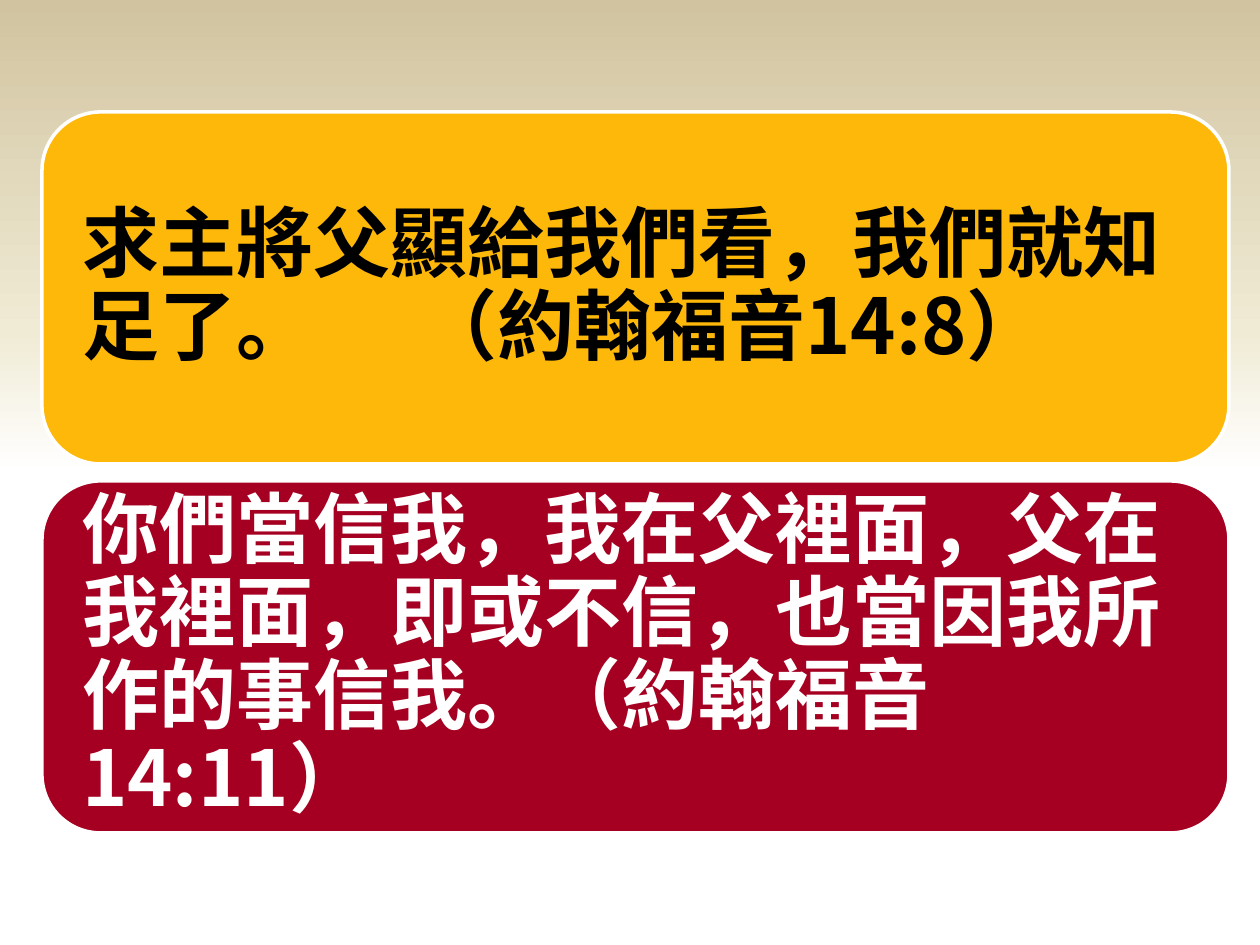
from lxml.etree import SubElement
from pptx import Presentation
from pptx.dml.color import RGBColor
from pptx.enum.shapes import MSO_SHAPE
from pptx.enum.text import MSO_ANCHOR, PP_ALIGN
from pptx.oxml.ns import qn
from pptx.util import Emu, Pt

FONT = "Noto Sans CJK SC"
VERSES = [
    ("求主將父顯給我們看，我們就知足了。\t（約翰福音14:8）", "FEB80A", "000000"),
    ("你們當信我，我在父裡面，父在我裡面，即或不信，也當因我所作的事信我。（約翰福音14:11）",
     "A50021", "FFFFFF"),
]
BACKGROUND_STOPS = [(50, "FFFFFF"), (65, "F0EBD5"), (100, "D1C39F")]


def px(length):
    """Turn pixels into EMU at 126 pixels to the inch."""
    return Emu(round(length * 914400 / 126))


def color(code):
    """Return the colour of a hex string."""
    return RGBColor.from_string(code)


def paint_background(page, stops):
    """Fill the page with a gradient that runs from bottom to top."""
    fill = page.background.fill
    fill.gradient()
    fill.gradient_angle = 90
    stop_list = page.background._cSld.find(".//" + qn("a:gsLst"))
    for old_stop in list(stop_list):
        stop_list.remove(old_stop)
    for position, code in stops:
        stop = SubElement(stop_list, qn("a:gs"), pos=str(position * 1000))
        SubElement(stop, qn("a:srgbClr"), val=code)


def add_tab_stop(para, position):
    """Give a paragraph one left tab stop."""
    tabs = SubElement(para._p.get_or_add_pPr(), qn("a:tabLst"))
    SubElement(tabs, qn("a:tab"), pos=str(px(position)), algn="l")


def write_text(box, text, size, ink, inset, tab_stop):
    """Write one bold paragraph, centred vertically in a box."""
    frame = box.text_frame
    frame.word_wrap = True
    frame.vertical_anchor = MSO_ANCHOR.MIDDLE
    frame.margin_left = frame.margin_right = px(inset)
    frame.margin_top = frame.margin_bottom = px(inset)
    para = frame.paragraphs[0]
    para.alignment = PP_ALIGN.LEFT
    para.line_spacing = 0.9
    para.space_after = Pt(15)
    if "\t" in text:
        add_tab_stop(para, tab_stop)
    span = para.add_run()
    span.text = text
    span.font.size = Pt(size)
    span.font.bold = True
    span.font.name = FONT
    span.font.color.rgb = color(ink)
    SubElement(span.font._element, qn("a:ea"), typeface=FONT)


def add_panel(page, left, top, width, height, fill):
    """Add a rounded panel with a white outline."""
    panel = page.shapes.add_shape(
        MSO_SHAPE.ROUNDED_RECTANGLE, px(left), px(top), px(width), px(height))
    panel.shadow.inherit = False
    panel.fill.solid()
    panel.fill.fore_color.rgb = color(fill)
    panel.line.color.rgb = color("FFFFFF")
    panel.line.width = Pt(2)
    return panel


def main():
    """Build the slide with its two verses."""
    deck = Presentation()
    deck.slide_width, deck.slide_height = px(1260), px(945)
    page = deck.slides.add_slide(deck.slide_layouts[6])
    paint_background(page, BACKGROUND_STOPS)
    for index, (text, fill, ink) in enumerate(VERSES):
        panel = add_panel(page, 42, 112 + 369 * index, 1187, 352, fill)
        write_text(panel, text, size=44, ink=ink, inset=23, tab_stop=338)
    deck.save("out.pptx")


if __name__ == "__main__":
    main()
